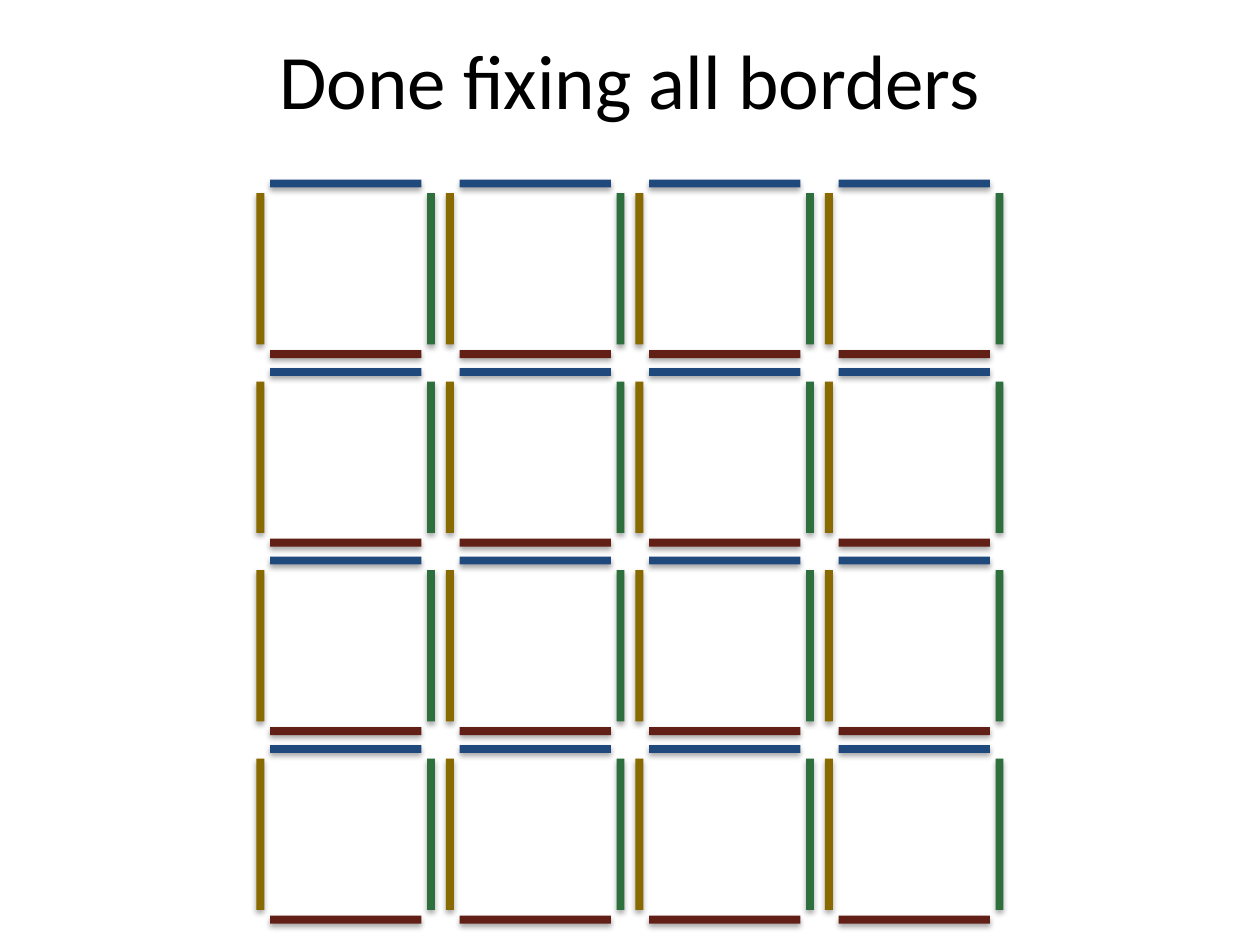
from dataclasses import dataclass

import pptx
import pptx.dml.color
import pptx.enum.shapes
import pptx.enum.text
import pptx.oxml
import pptx.oxml.ns
import pptx.shapes.autoshape
import pptx.shapes.group
import pptx.text.text
import pptx.util

Cm = pptx.util.Cm
RGBColor = pptx.dml.color.RGBColor

BLACK = RGBColor(0x00, 0x00, 0x00)
BLUE = RGBColor(0x1F, 0x49, 0x7D)
RED = RGBColor(0x62, 0x1F, 0x16)
OCHRE = RGBColor(0x89, 0x6A, 0x00)
GREEN = RGBColor(0x2E, 0x6F, 0x3E)

# All lengths are in centimetres.
CELLS_PER_SIDE = 4
FIRST_CENTRE_X, FIRST_CENTRE_Y = 6.97, 5.42
COLUMN_STEP, ROW_STEP = 3.82, 3.8
BORDER_OFFSET = 1.72
BORDER_LENGTH, BORDER_THICKNESS = 3.05, 0.16

SHADOW_XML = (
    f'<a:outerShdw {pptx.oxml.ns.nsdecls("a")} blurRad="40000" dist="23000" '
    'dir="5400000" rotWithShape="0"><a:srgbClr val="000000">'
    '<a:alpha val="35000"/></a:srgbClr></a:outerShdw>'
)


@dataclass(frozen=True)
class Border:
    """One side of a cell; across and down point from the cell's centre."""
    across: int
    down: int
    color: RGBColor


BORDERS = (
    Border(0, 1, RED),
    Border(0, -1, BLUE),
    Border(-1, 0, OCHRE),
    Border(1, 0, GREEN),
)


def write_text(frame: pptx.text.text.TextFrame, text: str, *, size: float,
               color: RGBColor, font: str = "Calibri") -> None:
    frame.word_wrap = True
    frame.vertical_anchor = pptx.enum.text.MSO_ANCHOR.MIDDLE
    paragraph = frame.paragraphs[0]
    paragraph.alignment = pptx.enum.text.PP_ALIGN.CENTER
    run = paragraph.add_run()
    run.text = text
    run.font.name = font
    run.font.size = pptx.util.Pt(size)
    run.font.color.rgb = color


def add_soft_shadow(shape: pptx.shapes.autoshape.Shape) -> None:
    shape.shadow.inherit = False
    effects = shape.element.spPr.find(pptx.oxml.ns.qn("a:effectLst"))
    effects.append(pptx.oxml.parse_xml(SHADOW_XML))


def draw_border(cell: pptx.shapes.group.GroupShape, border: Border,
                centre_x: float, centre_y: float) -> None:
    x = centre_x + border.across * BORDER_OFFSET
    y = centre_y + border.down * BORDER_OFFSET
    bar = cell.shapes.add_shape(
        pptx.enum.shapes.MSO_SHAPE.RECTANGLE,
        Cm(x - BORDER_THICKNESS / 2), Cm(y - BORDER_LENGTH / 2),
        Cm(BORDER_THICKNESS), Cm(BORDER_LENGTH))
    if border.down:
        bar.rotation = 90
    bar.fill.solid()
    bar.fill.fore_color.rgb = border.color
    bar.line.fill.background()
    add_soft_shadow(bar)


def main() -> None:
    deck = pptx.Presentation()
    deck.slide_width, deck.slide_height = Cm(25.4), Cm(19.05)
    slide = deck.slides.add_slide(deck.slide_layouts.get_by_name("Title Only"))

    title = slide.shapes.title
    title.left, title.top = Cm(0), Cm(0)
    title.width, title.height = deck.slide_width, Cm(3.18)
    write_text(title.text_frame, "Done fixing all borders", size=44, color=BLACK)

    for row in range(CELLS_PER_SIDE):
        for column in range(CELLS_PER_SIDE):
            cell = slide.shapes.add_group_shape()
            for border in BORDERS:
                draw_border(cell, border,
                            FIRST_CENTRE_X + column * COLUMN_STEP,
                            FIRST_CENTRE_Y + row * ROW_STEP)

    deck.save("out.pptx")


if __name__ == "__main__":
    main()
